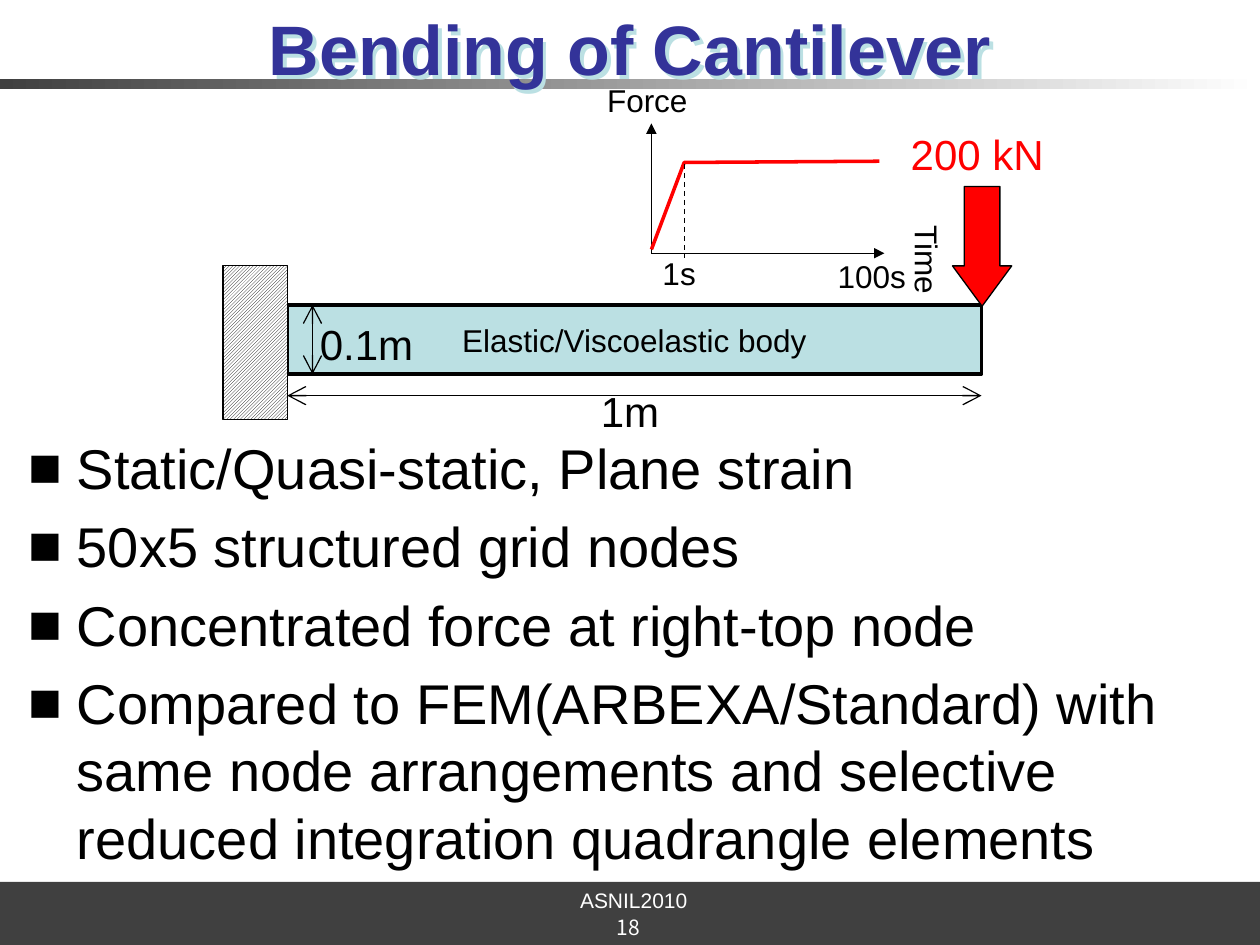
from lxml.etree import SubElement
from pptx import Presentation
from pptx.dml.color import RGBColor
from pptx.enum.dml import MSO_LINE, MSO_PATTERN
from pptx.enum.shapes import MSO_CONNECTOR, MSO_SHAPE
from pptx.enum.text import MSO_ANCHOR, MSO_AUTO_SIZE, PP_ALIGN
from pptx.oxml.ns import qn
from pptx.util import Inches, Pt

# Grid of 100 columns by 75 rows
COLS, ROWS = 100, 75
WIDE, HIGH = Inches(10), Inches(7.5)
BLACK, WHITE, RED, DARK = "000000", "FFFFFF", "FF0000", "404040"

# Beam edges and graph origin, in grid units
LEFT, RIGHT, TOP, BASE = 22.8, 77.9, 24.2, 29.7
ZERO_X, ZERO_Y, KNEE = 51.7, 20.1, 54.3

POINTS = [
    "Static/Quasi-static, Plane strain",
    "50x5 structured grid nodes",
    "Concentrated force at right-top node",
    "Compared to FEM(ARBEXA/Standard) with same node arrangements "
    "and selective reduced integration quadrangle elements",
]


def rgb(code):
    return RGBColor.from_string(code)


def col(n):
    return round(WIDE * n / COLS)


def row(n):
    return round(HIGH * n / ROWS)


def box(x, y, w, h):
    return col(x), row(y), col(w), row(h)


def place(shape, *area):
    shape.left, shape.top, shape.width, shape.height = box(*area)


def pad(frame):
    frame.margin_left = frame.margin_right = 0
    frame.margin_top = frame.margin_bottom = 0


def write(para, text, size, color=BLACK, font="Arial", bold=False):
    run = para.add_run()
    run.text = text
    run.font.size, run.font.name, run.font.bold = Pt(size), font, bold
    run.font.color.rgb = rgb(color)


def label(slide, area, text, size, color=BLACK, font="Arial", align=PP_ALIGN.LEFT):
    frame = slide.shapes.add_textbox(*box(*area)).text_frame
    frame.word_wrap = False
    frame.paragraphs[0].alignment = align
    write(frame.paragraphs[0], text, size, color, font)
    return frame


def edge(shape, color, width):
    shape.shadow.inherit = False
    if color:
        shape.line.color.rgb = rgb(color)
        shape.line.width = Pt(width)
    else:
        shape.line.fill.background()


def block(slide, kind, area, fill=None, line=None, width=0.75):
    shape = slide.shapes.add_shape(kind, *box(*area))
    edge(shape, line, width)
    if fill:
        shape.fill.solid()
        shape.fill.fore_color.rgb = rgb(fill)
    return shape


def rule(slide, start, end, head=None, tail=None, dash=False, size="med"):
    line = slide.shapes.add_connector(
        MSO_CONNECTOR.STRAIGHT, col(start[0]), row(start[1]), col(end[0]), row(end[1]))
    line.line.color.rgb = rgb(BLACK)
    line.line.width = Pt(0.75)
    if dash:
        line.line.dash_style = MSO_LINE.DASH
    for tag, kind in (("a:headEnd", head), ("a:tailEnd", tail)):
        if kind:
            SubElement(line.line._get_or_add_ln(), qn(tag), type=kind, w=size, len=size)
    SubElement(line._element.spPr, qn("a:effectLst"))


def frame_page(slide):
    # Fading rule below the title
    band = block(slide, MSO_SHAPE.RECTANGLE, (0, 6.3, COLS, 0.8))
    band.fill.gradient()
    band.fill.gradient_angle = 0
    for stop, color in zip(band.fill.gradient_stops, (DARK, WHITE)):
        stop.color.rgb = rgb(color)
    # Footer bar
    block(slide, MSO_SHAPE.RECTANGLE, (0, 70, COLS, 5), DARK)
    pad(label(slide, (46, 70.4, 8.6, 1.9), "ASNIL2010", 12, WHITE, align=PP_ALIGN.CENTER))
    page = label(slide, (44.1, 72.5, 11.5, 2.2), "18", 12, WHITE,
                 "Noto Sans CJK JP", PP_ALIGN.CENTER)
    page.vertical_anchor = MSO_ANCHOR.MIDDLE


def add_title(slide):
    title = slide.shapes.title
    place(title, 0, 0.4, COLS, 6.8)
    frame = title.text_frame
    pad(frame)
    frame.auto_size = MSO_AUTO_SIZE.NONE
    frame.vertical_anchor = MSO_ANCHOR.MIDDLE
    para = frame.paragraphs[0]
    para.alignment = PP_ALIGN.CENTER
    write(para, "Bending of Cantilever", 40, "333399", bold=True)
    # An unfilled shape casts its shadow from the letters
    glow = SubElement(title._element.spPr, qn("a:effectLst"))
    cast = SubElement(glow, qn("a:outerShdw"), dist="35921", dir="2700000")
    SubElement(cast, qn("a:srgbClr"), val="BBE0E3")


def add_list(slide):
    body = slide.placeholders[1]
    place(body, 2.3, 34.4, 97.6, 35.3)
    frame = body.text_frame
    pad(frame)
    frame.auto_size = MSO_AUTO_SIZE.NONE
    for i, text in enumerate(POINTS):
        para = frame.add_paragraph() if i else frame.paragraphs[0]
        props = para._p.get_or_add_pPr()
        props.set("marL", str(Inches(0.38)))
        props.set("indent", str(-Inches(0.38)))
        SubElement(props, qn("a:buFont"), typeface="Arial")
        SubElement(props, qn("a:buChar"), char="■")
        para.space_before = Pt(6.4 if i else 0)
        write(para, text, 32)


def draw_beam(slide):
    beam = block(slide, MSO_SHAPE.RECTANGLE,
                 (LEFT, TOP, RIGHT - LEFT, BASE - TOP), "BBE0E3", BLACK, 2)
    frame = beam.text_frame
    frame.word_wrap = False
    frame.vertical_anchor = MSO_ANCHOR.MIDDLE
    frame.paragraphs[0].alignment = PP_ALIGN.CENTER
    write(frame.paragraphs[0], "Elastic/Viscoelastic body", 18)
    # Hatched wall
    wall = block(slide, MSO_SHAPE.RECTANGLE, (LEFT - 5.1, 21.1, 5.1, 12.2), line=BLACK)
    wall.fill.patterned()
    wall.fill.pattern = MSO_PATTERN.DARK_UPWARD_DIAGONAL
    wall.fill.fore_color.rgb = rgb(BLACK)
    wall.fill.back_color.rgb = rgb(WHITE)
    # Dimensions
    rule(slide, (LEFT, 31.4), (RIGHT, 31.4), "arrow", "arrow", size="lg")
    label(slide, (46.7, 30.1, 6.6, 5), "1m", 24)
    rule(slide, (24.8, TOP), (24.8, BASE), "arrow", "arrow", size="lg")
    label(slide, (24.4, 24.8, 9.4, 5), "0.1m", 24)
    # Load at the free end
    label(slide, (71.3, 9.7, 12.6, 5), "200 kN", 24, RED)
    load = block(slide, MSO_SHAPE.DOWN_ARROW, (75.6, 14.8, 4.7, 9.5), RED, BLACK)
    load.adjustments[0], load.adjustments[1] = 0.6, 0.68


def draw_graph(slide):
    # Axes
    rule(slide, (ZERO_X, ZERO_Y), (70.2, ZERO_Y), tail="triangle")
    rule(slide, (ZERO_X, ZERO_Y), (ZERO_X, 9.8), tail="triangle")
    # Force over time
    pen = slide.shapes.build_freeform(col(ZERO_X), row(19.8))
    pen.add_line_segments([(col(KNEE), row(12.9)), (col(69.8), row(12.8))], close=False)
    curve = pen.convert_to_shape()
    curve.fill.background()
    edge(curve, RED, 2)
    rule(slide, (KNEE, 13), (KNEE, 20.5), dash=True)
    # Axis labels
    label(slide, (47.2, 5.9, 8.4, 4), "Force", 18)
    label(slide, (51.6, 19.7, 4.7, 4), "1s", 18)
    label(slide, (65.5, 19.9, 7.4, 4), "100s", 18)
    time = label(slide, (70.6, 16.9, 5, 6.6), "Time", 18)
    time._txBody.bodyPr.set("vert", "eaVert")


def main():
    deck = Presentation()
    deck.slide_width, deck.slide_height = WIDE, HIGH
    slide = deck.slides.add_slide(deck.slide_layouts[1])
    frame_page(slide)
    add_title(slide)
    add_list(slide)
    draw_beam(slide)
    draw_graph(slide)
    # Lift the title above the rule
    slide.shapes._spTree.append(slide.shapes.title._element)
    deck.save("out.pptx")


if __name__ == "__main__":
    main()
